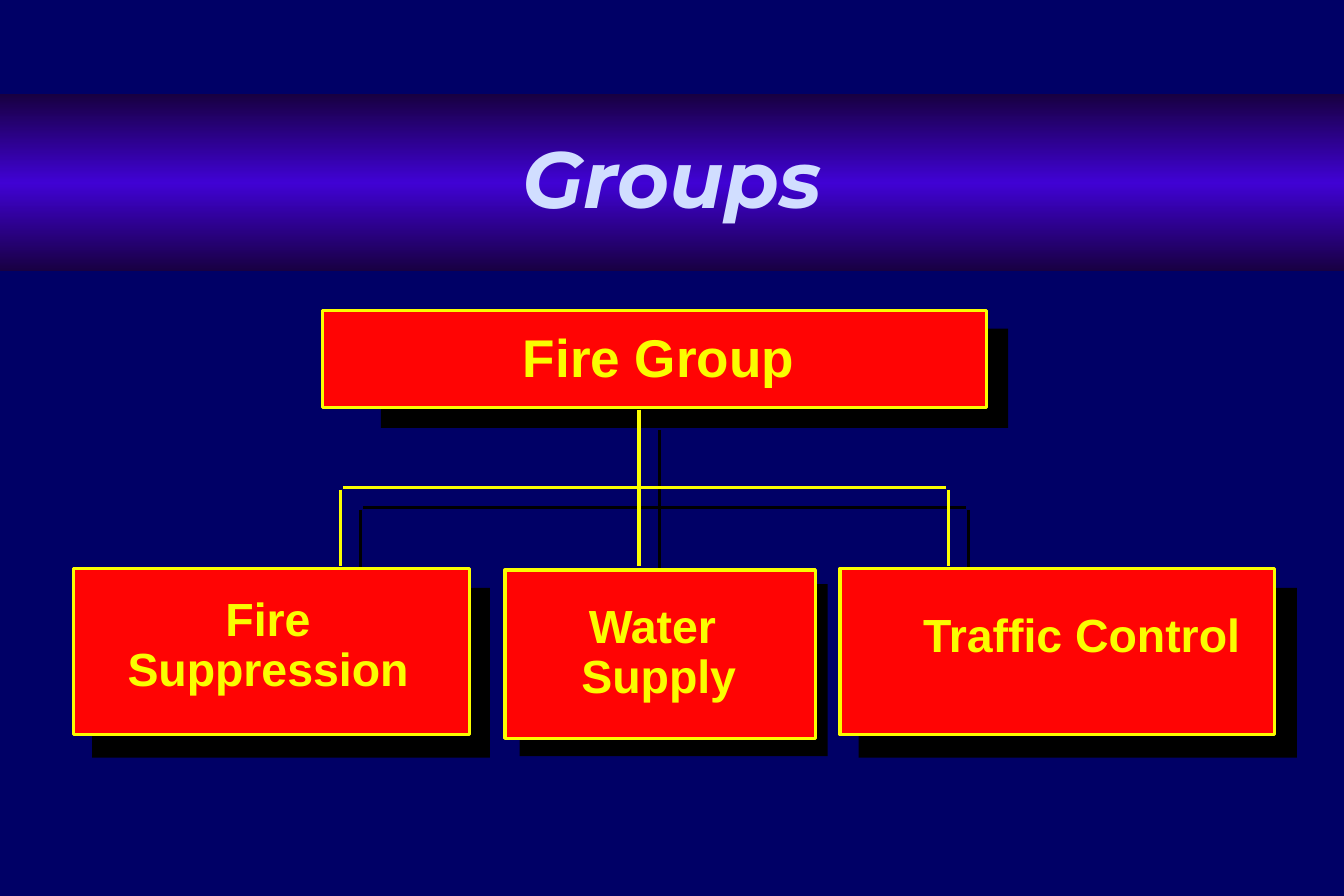
from lxml import etree
from pptx import Presentation
from pptx.dml.color import RGBColor
from pptx.enum import shapes as sh, text as tx
from pptx.oxml import ns
from pptx.util import Cm, Pt

# Content: lengths in cm, places as left, top, width, height
NAVY, BLACK, RED, YELLOW, PALE = "000066", "000000", "FF0404", "FAFD00", "D1DEFF"
TITLE = ("Groups", (0, 2.01, 28.58, 3.76))
BAND = [(0, "180042"), (50, "4002D4"), (100, "180042")]
# Each box: shadow, box, label, lines, size, wrap, indent
BOXES = [
    ((18.26, 12.5, 9.32, 3.61), (17.86, 12.09, 9.25, 3.53),
     (18.69, 12.9, 7.98, 1.32), ["Traffic Control"], 28, False, 0.64),
    ((8.1, 6.99, 13.34, 2.11), (6.86, 6.6, 14.12, 2.06),
     (10.85, 6.93, 6.32, 1.47), ["Fire Group"], 32, False, 0),
    ((11.05, 12.42, 6.55, 3.66), (10.74, 12.12, 6.6, 3.58),
     (10.06, 12.7, 7.9, 2.41), ["Water ", "Supply"], 28, True, 0),
    ((1.96, 12.5, 8.46, 3.61), (1.57, 12.09, 8.41, 3.53),
     (1.65, 12.55, 8.1, 2.41), ["Fire Suppression"], 28, True, 0),
]
# Tree lines: x1, y1, x2, y2
TREE = [(13.59, 8.71, 13.59, 12.04), (7.24, 10.41, 7.24, 12.04),
        (20.17, 10.41, 20.17, 12.04), (7.29, 10.36, 20.12, 10.36)]
DROP = 0.43

deck = Presentation()
deck.slide_width, deck.slide_height = Cm(28.58), Cm(19.05)
slide = deck.slides.add_slide(deck.slide_layouts[6])


def paint(fill, color):
    fill.solid()
    fill.fore_color.rgb = RGBColor.from_string(color)


def block(place, color, edge=None):
    box = slide.shapes.add_shape(sh.MSO_SHAPE.RECTANGLE, *map(Cm, place))
    box.shadow.inherit = False
    paint(box.fill, color)
    if edge:
        paint(box.line.fill, edge)
        box.line.width = Pt(2)
    else:
        box.line.fill.background()
    return box


def line(ends, color, shift=0):
    wire = slide.shapes.add_connector(
        sh.MSO_CONNECTOR.STRAIGHT, *[Cm(v + shift) for v in ends])
    paint(wire.line.fill, color)
    wire.line.width = Pt(2)
    etree.SubElement(wire._element.spPr, ns.qn("a:effectLst"))


def write(frame, rows, size, color, face="Arial", slant=None, indent=0):
    for i, row in enumerate(rows):
        para = frame.add_paragraph() if i else frame.paragraphs[0]
        para.text = row
        para.alignment = tx.PP_ALIGN.CENTER
        para.line_spacing = 0.9
        if indent:
            para._p.get_or_add_pPr().set("marL", str(Cm(indent)))
        font = para.font
        font.name, font.size, font.bold, font.italic = face, Pt(size), True, slant
        paint(font.fill, color)


def blend(box, stops):
    box.fill.gradient()
    box.fill.gradient_angle = 270
    grad = box._element.spPr.find(ns.qn("a:gradFill"))
    rows = grad.find(ns.qn("a:gsLst"))
    for old in list(rows):
        rows.remove(old)
    for pos, color in stops:
        stop = etree.SubElement(rows, ns.qn("a:gs"), pos=str(pos * 1000))
        etree.SubElement(stop, ns.qn("a:srgbClr"), val=color)


# Background
paint(slide.background.fill, NAVY)

# Shadows, then the tree lines
for shade, *rest in BOXES:
    block(shade, BLACK)
for color, shift in ((BLACK, DROP), (YELLOW, 0)):
    for ends in TREE:
        line(ends, color, shift)

# Title band
word, place = TITLE
band = block(place, NAVY)
blend(band, BAND)
band.text_frame.vertical_anchor = tx.MSO_ANCHOR.MIDDLE
write(band.text_frame, [word], 48, PALE, "Montserrat", True)

# Boxes, then their labels
for shade, place, *rest in BOXES:
    block(place, RED, YELLOW)
for shade, box, place, rows, size, wrap, indent in reversed(BOXES):
    frame = slide.shapes.add_textbox(*map(Cm, place)).text_frame
    frame.word_wrap = wrap
    frame.auto_size = tx.MSO_AUTO_SIZE.SHAPE_TO_FIT_TEXT
    write(frame, rows, size, YELLOW, indent=indent)

deck.save("out.pptx")
